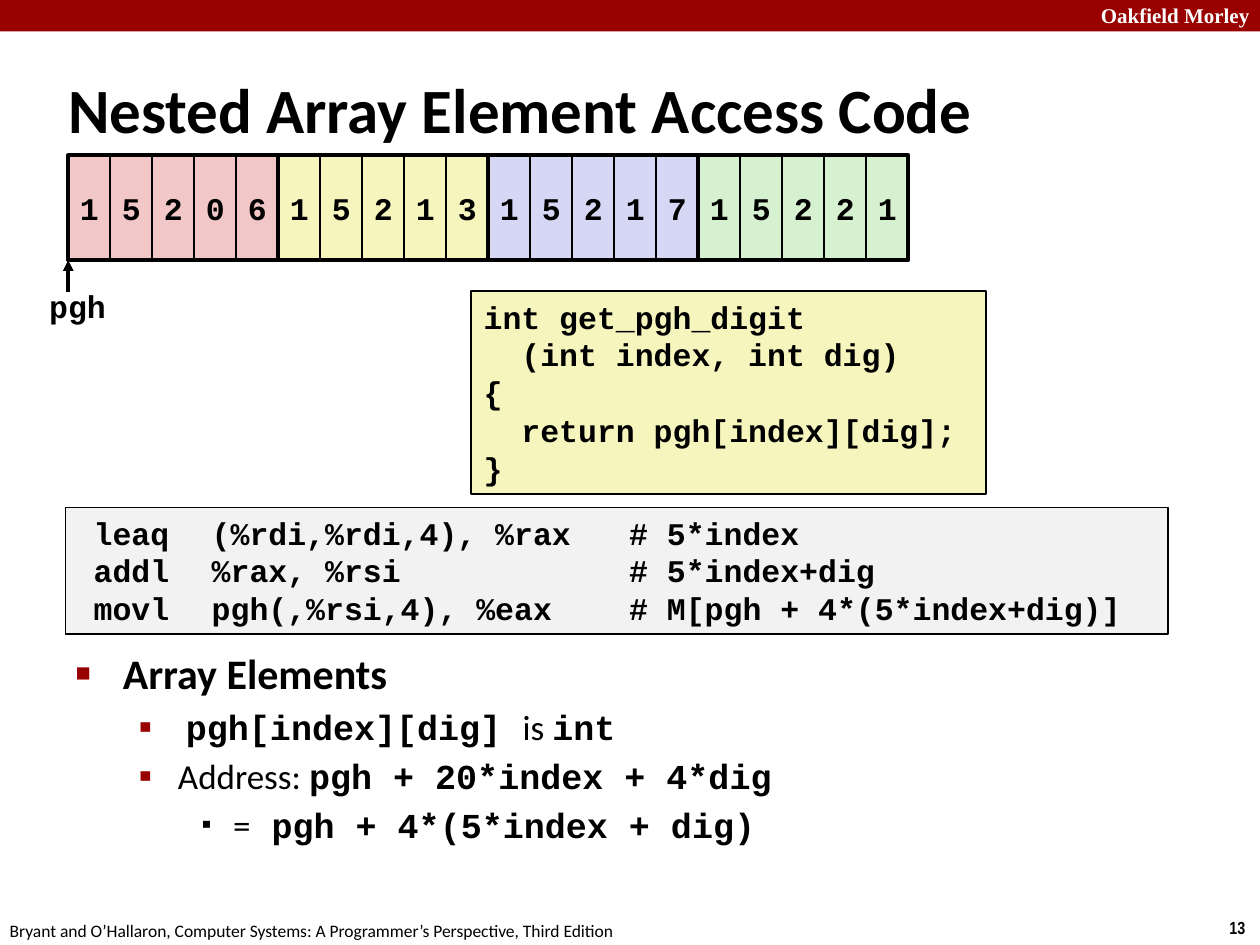
import dataclasses
import typing

import lxml.etree
import pptx
import pptx.dml.color
import pptx.enum.shapes
import pptx.enum.text
import pptx.oxml.ns
import pptx.util

Pt = pptx.util.Pt
RGBColor = pptx.dml.color.RGBColor
ALIGN = pptx.enum.text.PP_ALIGN
ANCHOR = pptx.enum.text.MSO_ANCHOR
qn = pptx.oxml.ns.qn

BLACK = RGBColor(0x00, 0x00, 0x00)
WHITE = RGBColor(0xFF, 0xFF, 0xFF)
CRIMSON = RGBColor(0x99, 0x00, 0x00)
PINK = RGBColor(0xF1, 0xC7, 0xC7)
YELLOW = RGBColor(0xF6, 0xF5, 0xBD)
LILAC = RGBColor(0xD6, 0xD6, 0xF5)
GREEN = RGBColor(0xD5, 0xF1, 0xCF)
GREY = RGBColor(0xF2, 0xF2, 0xF2)

SANS = "Calibri"
MONO = "Courier New"
CODE_SIZE = 18
CODE_LEADING = 21.6
CODE_INDENT = 21.6

ARRAY_LEFT, ARRAY_TOP = 39, 88.7
CELL_WIDTH, CELL_HEIGHT = 24, 60


@dataclasses.dataclass
class Area:
    left: float
    top: float
    width: float
    height: float

    def lengths(self) -> list:
        return [Pt(value) for value in (self.left, self.top, self.width, self.height)]


@dataclasses.dataclass
class Span:
    text: str
    font: str = MONO
    size: float = CODE_SIZE
    bold: bool = True
    color: RGBColor = BLACK


@dataclasses.dataclass
class Item:
    level: int
    margin: float
    hanging: float
    bullet: str
    bullet_percent: int
    bullet_color: RGBColor
    spans: list[Span]


@dataclasses.dataclass
class Label:
    area: Area
    span: Span


@dataclasses.dataclass
class ArrayRow:
    digits: str
    fill: RGBColor


ARRAY_ROWS = [
    ArrayRow("15206", PINK),
    ArrayRow("15213", YELLOW),
    ArrayRow("15217", LILAC),
    ArrayRow("15221", GREEN),
]

LABELS = [
    Label(Area(622, -2, 103, 21.6), Span("Oakfield Morley", "Times New Roman", 12, color=WHITE)),
    Label(Area(695.5, 520.6, 24.5, 19.4), Span("13", "Arial Narrow", 10)),
    Label(
        Area(-1.5, 522, 366, 19.4),
        Span(
            "Bryant and O’Hallaron, Computer Systems: A Programmer’s Perspective, Third Edition",
            SANS, 10, False,
        ),
    ),
    Label(Area(21, 160.6, 47.5, 28.8), Span("pgh")),
]

ITEMS = [
    Item(0, 27, 27, "■", 60, CRIMSON, [Span("Array Elements", SANS, 24)]),
    Item(1, 58.5, 22.5, "▪", 110, CRIMSON, [
        Span(" ", SANS, 20), Span("pgh[index][dig] ", MONO, 20),
        Span("is ", SANS, 20, False), Span("int", MONO, 20),
    ]),
    Item(1, 58.5, 22.5, "▪", 110, CRIMSON, [
        Span("Address: ", SANS, 20, False), Span("pgh + 20*index + 4*dig", MONO, 20),
    ]),
    Item(2, 90, 18, "▪", 80, BLACK, [
        Span("=", SANS, 20, False), Span(" pgh + 4*(5*index + dig)", MONO, 20),
    ]),
]

C_LINES = [
    (0, "int get_pgh_digit"),
    (1, "(int index, int dig)"),
    (0, "{"),
    (1, "return pgh[index][dig];"),
    (0, "}"),
]
ASSEMBLY_LINES = [
    (0, "\tleaq\t(%rdi,%rdi,4), %rax\t# 5*index"),
    (0, "\taddl\t%rax, %rsi\t# 5*index+dig"),
    (0, "\tmovl\tpgh(,%rsi,4), %eax\t# M[pgh + 4*(5*index+dig)]"),
]
ASSEMBLY_TABS = (9, 76.5, 315)


def apply_format(target: typing.Any, values: dict[str, typing.Any]) -> None:
    for name, value in values.items():
        setattr(target, name, value)


def add_element(parent, tag: str, **attributes: str):
    return lxml.etree.SubElement(parent, qn(tag), attributes)


def write_span(para, span: Span) -> None:
    run = para.add_run()
    run.text = span.text
    apply_format(run.font, {"name": span.font, "size": Pt(span.size), "bold": span.bold})
    run.font.color.rgb = span.color


def next_paragraph(frame, index: int):
    return frame.add_paragraph() if index else frame.paragraphs[0]


def add_box(page, area: Area, fill: RGBColor | None, line_width: float):
    """Add a rectangle; no fill or a zero line width leaves that part out."""
    box = page.shapes.add_shape(pptx.enum.shapes.MSO_SHAPE.RECTANGLE, *area.lengths())
    box.shadow.inherit = False
    if fill is None:
        box.fill.background()
    else:
        box.fill.solid()
        box.fill.fore_color.rgb = fill
    if line_width:
        box.line.color.rgb = BLACK
        box.line.width = Pt(line_width)
    else:
        box.line.fill.background()
    return box


def add_label(page, label: Label) -> None:
    frame = page.shapes.add_textbox(*label.area.lengths()).text_frame
    frame.word_wrap = False
    write_span(frame.paragraphs[0], label.span)


def add_code(page, area: Area, fill: RGBColor, lines: list[tuple[int, str]],
             tabs: tuple = ()) -> None:
    frame = add_box(page, area, fill, 1).text_frame
    apply_format(frame, {"word_wrap": True, "vertical_anchor": ANCHOR.TOP})
    for index, (depth, text) in enumerate(lines):
        para = next_paragraph(frame, index)
        apply_format(para, {"alignment": ALIGN.LEFT, "line_spacing": Pt(CODE_LEADING)})
        properties = para._p.get_or_add_pPr()
        properties.set("marL", str(Pt(depth * CODE_INDENT)))
        if tabs:
            stops = add_element(properties, "a:tabLst")
            for position in tabs:
                add_element(stops, "a:tab", pos=str(Pt(position)), algn="l")
        write_span(para, Span(text))


def add_array_row(page, row: ArrayRow, left: float) -> None:
    for column, digit in enumerate(row.digits):
        area = Area(left + column * CELL_WIDTH, ARRAY_TOP, CELL_WIDTH, CELL_HEIGHT)
        frame = add_box(page, area, row.fill, 1).text_frame
        apply_format(frame, {"word_wrap": False, "vertical_anchor": ANCHOR.MIDDLE})
        frame.paragraphs[0].alignment = ALIGN.CENTER
        write_span(frame.paragraphs[0], Span(digit))


def add_pointer(page, x: float, start: float, end: float) -> None:
    arrow = page.shapes.add_connector(
        pptx.enum.shapes.MSO_CONNECTOR.STRAIGHT, Pt(x), Pt(start), Pt(x), Pt(end))
    arrow.line.color.rgb = BLACK
    arrow.line.width = Pt(2)
    add_element(arrow.line._get_or_add_ln(), "a:tailEnd", type="triangle")
    add_element(arrow._element.spPr, "a:effectLst")


def place(shape, area: Area) -> None:
    apply_format(shape, dict(zip(("left", "top", "width", "height"), area.lengths())))
    shape.text_frame.auto_size = pptx.enum.text.MSO_AUTO_SIZE.NONE


def write_items(frame, items: list[Item]) -> None:
    for index, item in enumerate(items):
        para = next_paragraph(frame, index)
        para.level = item.level
        properties = para._p.get_or_add_pPr()
        properties.set("marL", str(Pt(item.margin)))
        properties.set("indent", str(Pt(-item.hanging)))
        color = add_element(properties, "a:buClr")
        add_element(color, "a:srgbClr", val=str(item.bullet_color))
        add_element(properties, "a:buSzPct", val=str(item.bullet_percent * 1000))
        add_element(properties, "a:buChar", char=item.bullet)
        for span in item.spans:
            write_span(para, span)


def main() -> None:
    deck = pptx.Presentation()
    apply_format(deck, {"slide_width": Pt(720), "slide_height": Pt(540)})
    page = deck.slides.add_slide(deck.slide_layouts[1])
    title, body = page.placeholders

    add_box(page, Area(0, 0, 720, 18), CRIMSON, 0)
    place(title, Area(31.7, 39, 652, 45.4))
    heading = title.text_frame.paragraphs[0]
    heading.alignment = ALIGN.LEFT
    write_span(heading, Span("Nested Array Element Access Code", SANS, 36))
    place(body, Area(36, 366.5, 655, 137.5))
    write_items(body.text_frame, ITEMS)

    add_code(page, Area(269.3, 166.5, 294, 116), YELLOW, C_LINES)
    add_code(page, Area(37.4, 290, 630, 72.5), GREY, ASSEMBLY_LINES, ASSEMBLY_TABS)

    add_pointer(page, ARRAY_LEFT, 167, ARRAY_TOP + CELL_HEIGHT)
    for index, row in enumerate(ARRAY_ROWS):
        width = len(row.digits) * CELL_WIDTH
        left = ARRAY_LEFT + index * width
        add_array_row(page, row, left)
    for index, row in enumerate(ARRAY_ROWS):
        width = len(row.digits) * CELL_WIDTH
        add_box(page, Area(ARRAY_LEFT + index * width, ARRAY_TOP, width, CELL_HEIGHT), None, 2.25)
    for label in LABELS:
        add_label(page, label)
    deck.save("out.pptx")


if __name__ == "__main__":
    main()
